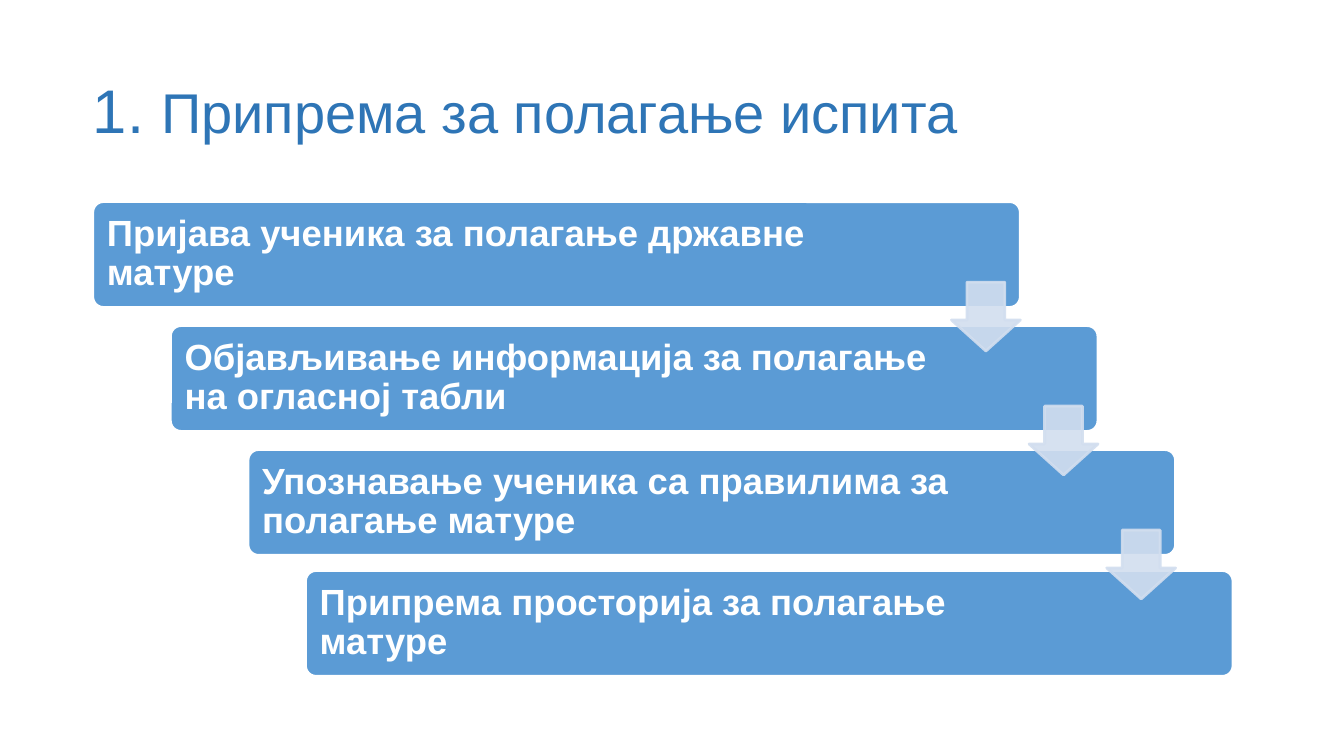
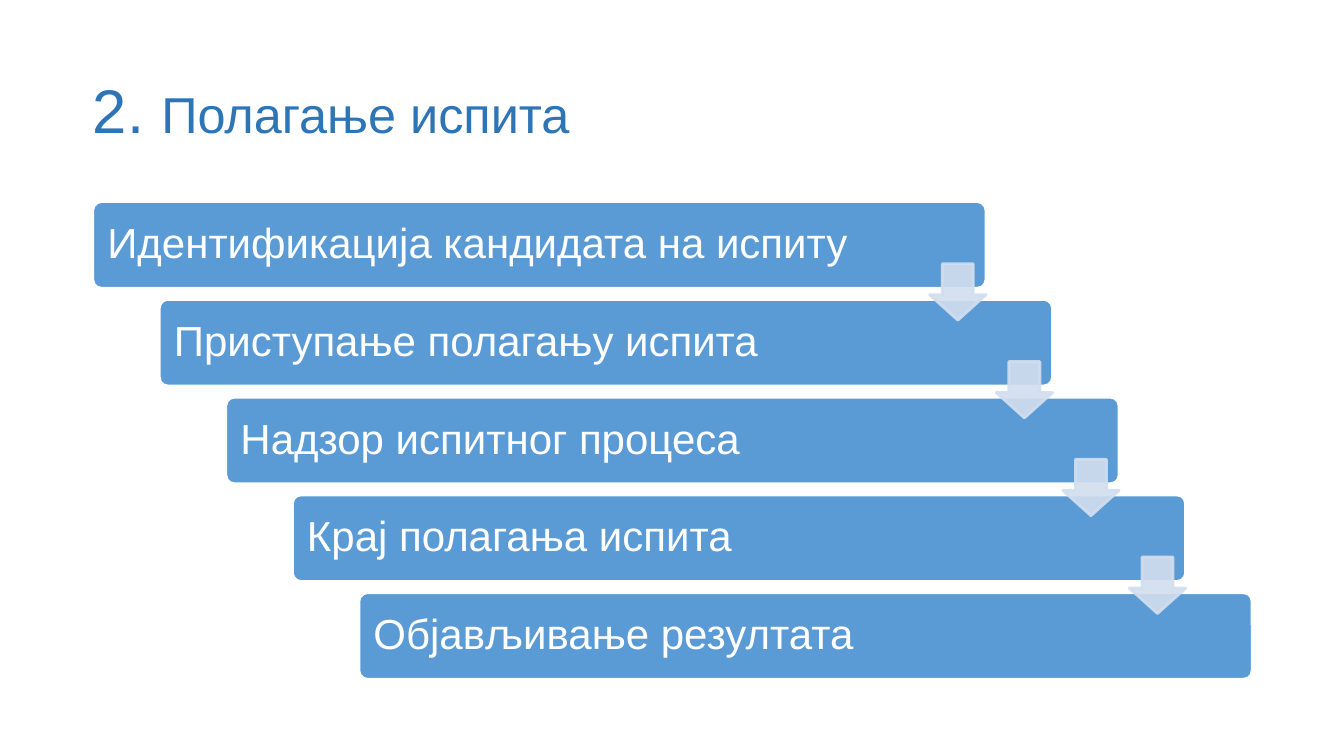
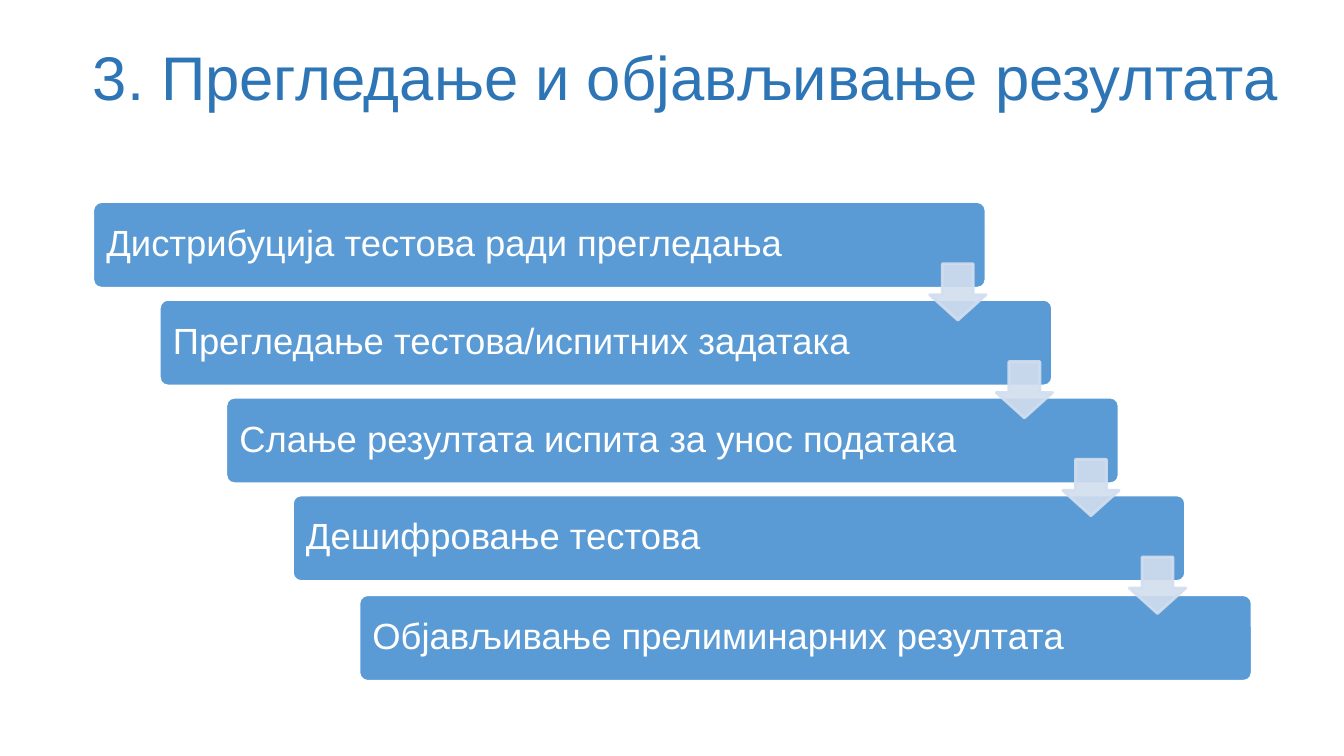
from pptx import Presentation
from pptx.dml.color import RGBColor
from pptx.enum import shapes, text
from pptx.oxml import parse_xml
from pptx.oxml.ns import nsdecls, qn
from pptx.util import Inches, Pt

FONT = "Arial"
NAVY = RGBColor(0x2E, 0x75, 0xB6)
BLUE = RGBColor(0x5B, 0x9B, 0xD5)
PALE = RGBColor(0xD2, 0xDE, 0xEF)
WHITE = RGBColor(0xFF, 0xFF, 0xFF)
LEFT, TOP = 0.92, 2


def add_run(para, words, size, color, bold=False):
    run = para.add_run()
    run.text = words
    font = run.font
    font.name, font.size, font.bold = FONT, Pt(size), bold
    font.color.rgb = color


def set_frame(frame, left=0, top=0, right=0, bottom=0):
    frame.word_wrap = True
    frame.auto_size = text.MSO_AUTO_SIZE.NONE
    frame.vertical_anchor = text.MSO_ANCHOR.MIDDLE
    frame.margin_left, frame.margin_right = Inches(left), Inches(right)
    frame.margin_top, frame.margin_bottom = Inches(top), Inches(bottom)
    para = frame.paragraphs[0]
    para.alignment = text.PP_ALIGN.LEFT
    para.line_spacing = 0.9
    return para


def set_title(slide, runs, width, bottom):
    title = slide.shapes.title
    title.left, title.top = Inches(LEFT), Inches(0.4)
    title.width, title.height = Inches(width), Inches(1.45)
    para = set_frame(title.text_frame, bottom=bottom)
    for words, size in runs:
        add_run(para, words, size, NAVY)


def add_block(slide, kind, box, color, edge, adjust):
    block = slide.shapes.add_shape(kind, *map(Inches, box))
    block.shadow.inherit = False
    block.fill.solid()
    block.fill.fore_color.rgb = color
    block.line.color.rgb = edge
    block.line.width = Pt(2)
    for i, value in enumerate(adjust):
        block.adjustments[i] = value
    return block


def add_bar(slide, box, words, size, bold, pad, right):
    bar = add_block(slide, shapes.MSO_SHAPE.ROUNDED_RECTANGLE, box, BLUE, WHITE, [0.1])
    para = set_frame(bar.text_frame, pad, pad, right, pad)
    add_run(para, words, size, WHITE, bold)


def add_arrow(slide, box):
    arrow = add_block(slide, shapes.MSO_SHAPE.DOWN_ARROW, box, PALE, PALE, [0.55, 0.45])
    for tint in arrow._element.spPr.iter(qn("a:srgbClr")):
        tint.append(parse_xml(f'<a:alpha {nsdecls("a")} val="90000"/>'))


def add_stairs(slide, items, bar, step, size, pad, right, bold=False, shift=(0, 0)):
    wide, high = bar
    side = 0.65 * high
    spots = [(LEFT + i * step[0], TOP + i * step[1]) for i in range(len(items))]
    x, y = spots[-1]
    places = spots[:-1] + [(x + shift[0], y + shift[1])]
    for (x, y), words in zip(places, items):
        add_bar(slide, (x, y, wide, high), words, size, bold, pad, right)
    for x, y in spots[:-1]:
        add_arrow(slide, (x + wide - side, y + step[1] - 0.41 * high, side, side))


def add_page(deck, runs, items, width=11.5, bottom=0, **style):
    slide = deck.slides.add_slide(deck.slide_layouts[5])
    set_title(slide, runs, width, bottom)
    add_stairs(slide, items, **style)


def main():
    deck = Presentation()
    deck.slide_width, deck.slide_height = Inches(13.33), Inches(7.5)
    five = dict(bar=(8.86, 0.86), step=(0.66, 0.97), right=1.1)
    add_page(
        deck,
        [("1. ", 44), ("Припрема за полагање испита", 40)],
        [
            "Пријава ученика за полагање државне матуре",
            "Објављивање информација за полагање на огласној табли",
            "Упознавање ученика са правилима за полагање матуре",
            "Припрема просторија за полагање матуре",
        ],
        bar=(9.2, 1.05), step=(0.77, 1.23), size=26, pad=0.11,
        right=1.57, bold=True, shift=(-0.2, -0.03),
    )
    add_page(
        deck,
        [("2. ", 44), ("Полагање испита", 36)],
        [
            "Идентификација кандидата на испиту",
            "Приступање полагању испита",
            "Надзор испитног процеса",
            "Крај полагања испита",
            "Објављивање резултата",
        ],
        size=30, pad=0.12, **five,
    )
    add_page(
        deck,
        [("3. Прегледање и објављивање резултата", 44)],
        [
            "Дистрибуција тестова ради прегледања",
            "Прегледање тестова/испитних задатака",
            "Слање резултата испита за унос података",
            "Дешифровање тестова",
            "Објављивање прелиминарних резултата",
        ],
        width=12.13, bottom=0.66, size=26, pad=0.11, shift=(0, 0.02), **five,
    )
    deck.save("out.pptx")


if __name__ == "__main__":
    main()
